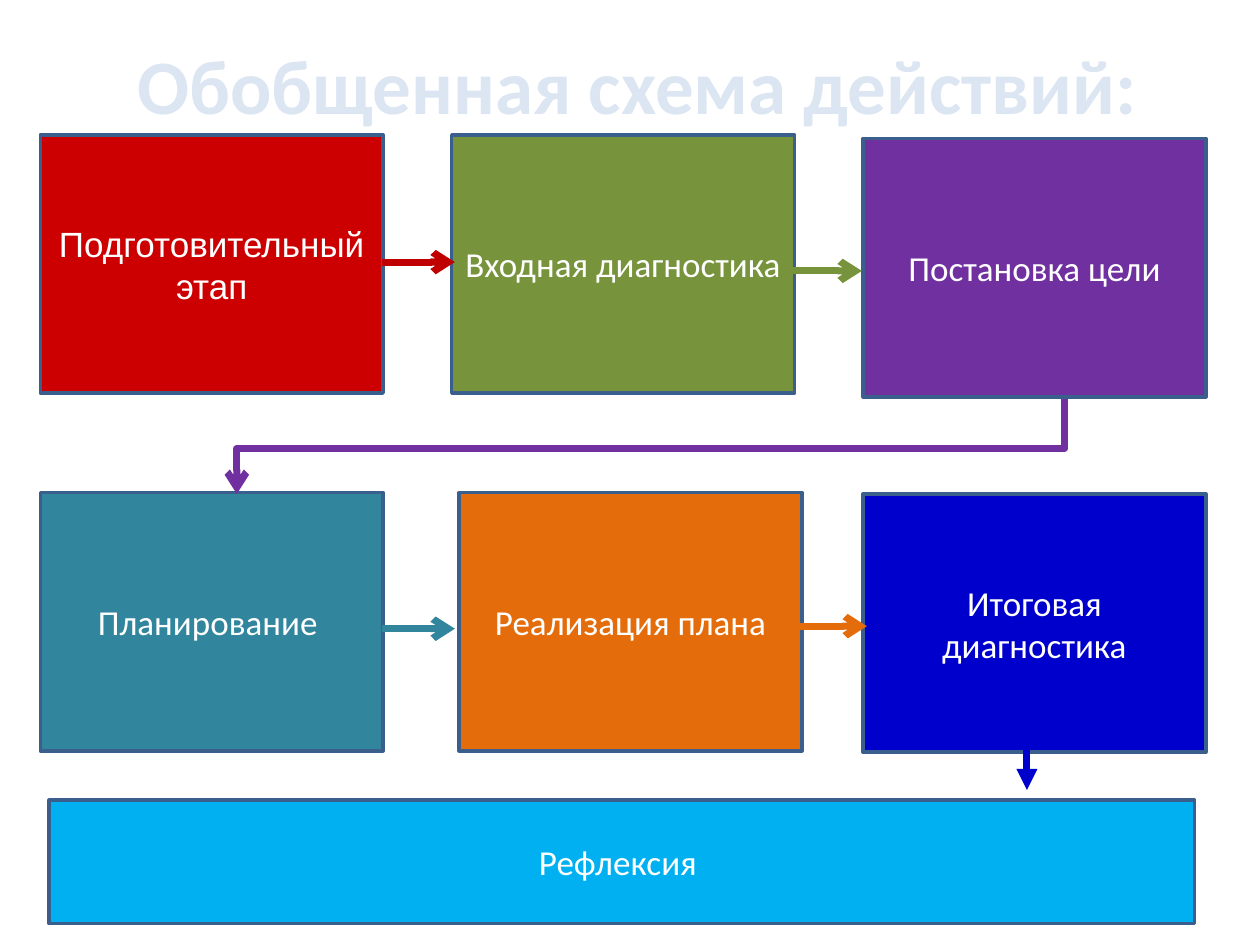
from dataclasses import dataclass

from lxml.etree import SubElement
from pptx import Presentation
from pptx.dml.color import RGBColor
from pptx.enum.shapes import MSO_CONNECTOR, MSO_SHAPE
from pptx.enum.text import MSO_ANCHOR, PP_ALIGN
from pptx.oxml.ns import qn
from pptx.util import Inches, Pt

COLORS = {
    "title": "DCE6F2", "text": "FFFFFF", "border": "3A5F8C",
    "red": "CC0000", "dark red": "C00000", "green": "77933C",
    "purple": "7030A0", "teal": "31859C", "orange": "E46C0A",
    "blue": "0000CC", "sky": "00B0F0",
}
LEFT, TOP = 0.32, 1.07
COLUMN_STEP, ROW_STEP = 3.265, 2.84
BOX_WIDTH, BOX_HEIGHT = 2.72, 2.05


@dataclass
class Stage:
    text: str
    color: str
    column: int
    row: int
    shift_x: float = 0
    shift_y: float = 0
    font: str = "Calibri"


@dataclass
class Arrow:
    color: str
    points: list[tuple[float, float]]
    head: str = "arrow"


STAGES = [
    Stage("Подготовительный этап", "red", 0, 0, font="Arial"),
    Stage("Входная диагностика", "green", 1, 0),
    Stage("Постановка цели", "purple", 2, 0, shift_y=0.03),
    Stage("Планирование ", "teal", 0, 1),
    Stage("Реализация плана", "orange", 1, 1, shift_x=0.06),
    Stage("Итоговая диагностика", "blue", 2, 1, shift_y=0.01),
]
ARROWS = [
    Arrow("dark red", [(3.03, 2.08), (3.61, 2.08)]),
    Arrow("green", [(6.26, 2.15), (6.84, 2.15)]),
    Arrow("purple", [(8.45, 3.17), (8.45, 3.56), (1.88, 3.56), (1.88, 3.92)]),
    Arrow("teal", [(3.03, 4.99), (3.61, 4.99)]),
    Arrow("orange", [(6.3, 4.97), (6.88, 4.97)]),
    Arrow("blue", [(8.15, 5.95), (8.15, 6.27)], head="triangle"),
]


def rgb(name: str) -> RGBColor:
    return RGBColor.from_string(COLORS[name])


def add_title(slide, text: str) -> None:
    title = slide.shapes.title
    title.left, title.top = Inches(0.56), Inches(0.04)
    title.width, title.height = Inches(9), Inches(1.25)
    frame = title.text_frame
    frame.text = text
    frame.vertical_anchor = MSO_ANCHOR.MIDDLE
    paragraph = frame.paragraphs[0]
    paragraph.alignment = PP_ALIGN.CENTER
    font = paragraph.font
    font.name, font.size, font.bold = "Calibri", Pt(44), True
    font.color.rgb = rgb("title")


def add_box(slide, text: str, color: str, left: float, top: float,
            width: float, height: float, font_name: str = "Calibri") -> None:
    shape = slide.shapes.add_shape(
        MSO_SHAPE.RECTANGLE, *map(Inches, (left, top, width, height)))
    shape.shadow.inherit = False
    shape.fill.solid()
    shape.fill.fore_color.rgb = rgb(color)
    shape.line.color.rgb = rgb("border")
    shape.line.width = Pt(2)
    frame = shape.text_frame
    frame.word_wrap = True
    frame.vertical_anchor = MSO_ANCHOR.MIDDLE
    frame.text = text
    paragraph = frame.paragraphs[0]
    paragraph.alignment = PP_ALIGN.CENTER
    paragraph.font.name, paragraph.font.size = font_name, Pt(20)
    paragraph.font.color.rgb = rgb("text")


def add_arrow(slide, arrow: Arrow) -> None:
    """Draw a straight connector, or an open outline when the arrow bends."""
    points = [(Inches(x), Inches(y)) for x, y in arrow.points]
    if len(points) == 2:
        shape = slide.shapes.add_connector(MSO_CONNECTOR.STRAIGHT, *points[0], *points[1])
    else:
        builder = slide.shapes.build_freeform(*points[0])
        builder.add_line_segments(points[1:], close=False)
        shape = builder.convert_to_shape()
        shape.fill.background()
    shape.line.color.rgb = rgb(arrow.color)
    shape.line.width = Pt(4)
    SubElement(shape.line._get_or_add_ln(), qn("a:tailEnd"), type=arrow.head)
    SubElement(shape._element.spPr, qn("a:effectLst"))


def main() -> None:
    presentation = Presentation()
    presentation.slide_width, presentation.slide_height = Inches(10), Inches(7.5)
    slide = presentation.slides.add_slide(presentation.slide_layouts[5])
    add_title(slide, "Обобщенная схема действий:")
    for stage in STAGES:
        add_box(slide, stage.text, stage.color,
                LEFT + stage.column * COLUMN_STEP + stage.shift_x,
                TOP + stage.row * ROW_STEP + stage.shift_y,
                BOX_WIDTH, BOX_HEIGHT, stage.font)
    add_box(slide, "Рефлексия ", "sky", 0.39, 6.35, 9.09, 0.98)
    for arrow in ARROWS:
        add_arrow(slide, arrow)
    presentation.save("out.pptx")


if __name__ == "__main__":
    main()
